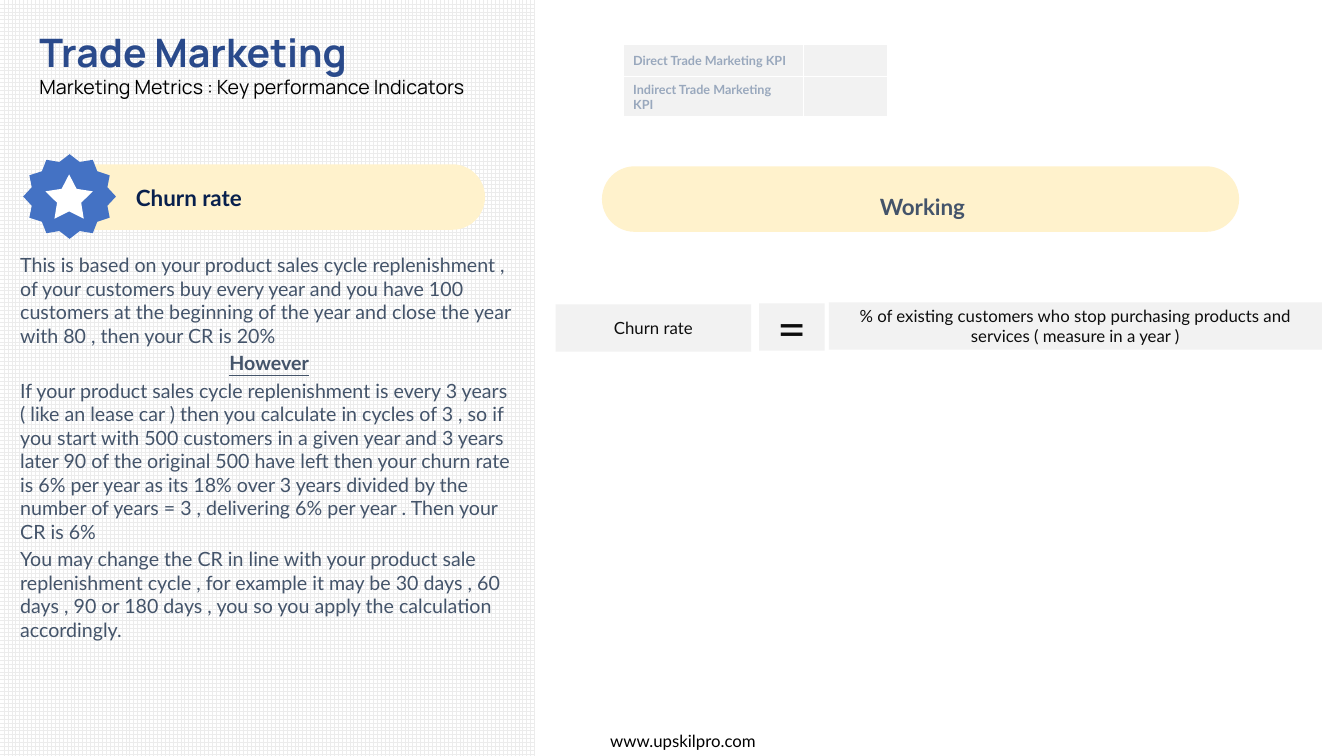
from dataclasses import dataclass

from lxml.etree import SubElement
from pptx import Presentation
from pptx.dml.color import RGBColor
from pptx.enum.dml import MSO_PATTERN
from pptx.enum.shapes import MSO_SHAPE
from pptx.enum.text import MSO_ANCHOR, MSO_AUTO_SIZE, PP_ALIGN
from pptx.oxml.ns import qn
from pptx.shapes.autoshape import Shape
from pptx.slide import Slide
from pptx.text.text import TextFrame
from pptx.util import Inches, Pt

SLIDE_WIDTH, SLIDE_HEIGHT = Inches(13.33), Inches(7.5)


@dataclass(frozen=True)
class Theme:
    body_font: str = "Lato"
    title_font: str = "Manrope"
    grid: str = "ECECEC"
    white: str = "FFFFFF"
    black: str = "000000"
    tile: str = "F2F2F2"
    tile_text: str = "0D0D0D"
    cream: str = "FFF2CC"
    badge: str = "4472C4"
    title: str = "2A4A8B"
    navy: str = "08204D"
    slate: str = "44546A"
    muted: str = "99A8BD"
    title_size: float = 28
    sign_size: float = 36
    heading_size: float = 16
    body_size: float = 14
    small_size: float = 12
    table_size: float = 9


THEME = Theme()


@dataclass(frozen=True)
class Area:
    """Left, top, width and height in percent of the slide."""
    left: float
    top: float
    width: float
    height: float

    def emu(self) -> tuple[int, int, int, int]:
        return (int(SLIDE_WIDTH * self.left / 100), int(SLIDE_HEIGHT * self.top / 100),
                int(SLIDE_WIDTH * self.width / 100), int(SLIDE_HEIGHT * self.height / 100))


@dataclass(frozen=True)
class Style:
    size: float
    color: str
    bold: bool = False
    align: PP_ALIGN = PP_ALIGN.LEFT
    underline: bool = False
    font: str = THEME.body_font


@dataclass(frozen=True)
class Heading:
    text: str
    pill: Area
    label: Area
    style: Style


@dataclass(frozen=True)
class Tile:
    text: str
    area: Area
    size: float


BODY = Style(THEME.body_size, THEME.slate)
HOWEVER = Style(THEME.body_size, THEME.slate, True, PP_ALIGN.CENTER, True)
TITLE_LINES = [
    ("Trade Marketing", Style(THEME.title_size, THEME.title, True, font=THEME.title_font)),
    ("Marketing Metrics : Key performance Indicators",
     Style(THEME.body_size, THEME.black, font=THEME.title_font)),
]
EXPLANATION = [
    ("This is based on your product sales cycle replenishment , of your customers buy every "
     "year and you have 100 customers at the beginning of the year and close the year with "
     "80 , then your CR is 20%", BODY),
    ("However", HOWEVER),
    ("If your product sales cycle replenishment is every 3 years ( like an lease car ) then "
     "you calculate in cycles of 3 , so if you start with 500 customers in a given year and "
     "3 years later 90 of the original 500 have left then your churn rate is 6% per year as "
     "its 18% over 3 years divided by the number of years = 3 , delivering 6% per year . "
     "Then your CR is 6%", BODY),
    ("You may change the CR in line with your product sale replenishment cycle , for example "
     "it may be 30 days , 60 days , 90 or 180 days , you so you apply the calculation "
     "accordingly.", BODY),
]
HEADINGS = [
    Heading("Working", Area(44.79, 22, 47.41, 8.67), Area(46.81, 24.8, 43.66, 4.93),
            Style(THEME.heading_size, THEME.slate, True, PP_ALIGN.CENTER)),
    Heading("Churn rate", Area(2.93, 21.73, 33.16, 8.67), Area(9.38, 23.73, 9.68, 4.93),
            Style(THEME.heading_size, THEME.navy, True)),
]
FORMULA = [
    Tile("Churn rate", Area(41.34, 40.27, 14.55, 6.27), THEME.small_size),
    Tile("=", Area(56.49, 40.13, 4.88, 6.27), THEME.sign_size),
    Tile("% of existing customers who stop purchasing products and services "
         "( measure in a year )", Area(61.67, 40, 36.68, 6.27), THEME.small_size),
]
KPI_KINDS = ["Direct Trade Marketing KPI", "Indirect Trade Marketing KPI"]
KPI_COLUMNS = [1.79, 0.83]


def write(frame: TextFrame, lines: list[tuple[str, Style]], gap: float = 0,
          anchor: MSO_ANCHOR = MSO_ANCHOR.TOP) -> None:
    """Fill a frame with unbulleted paragraphs, gap points apart."""
    frame.word_wrap = True
    frame.auto_size = MSO_AUTO_SIZE.NONE
    frame.vertical_anchor = anchor
    for index, (text, style) in enumerate(lines):
        paragraph = frame.add_paragraph() if index else frame.paragraphs[0]
        paragraph.text = text
        paragraph.alignment = style.align
        paragraph.space_before = Pt(gap if index else 0)
        properties = paragraph._p.get_or_add_pPr()
        properties.set("marL", "0")
        properties.set("indent", "0")
        SubElement(properties, qn("a:buNone"))
        font = paragraph.font
        font.name, font.size = style.font, Pt(style.size)
        font.bold, font.underline = style.bold, style.underline
        font.color.rgb = RGBColor.from_string(style.color)


def add_block(slide: Slide, kind: MSO_SHAPE, area: Area, color: str,
              adjustment: float | None = None) -> Shape:
    block = slide.shapes.add_shape(kind, *area.emu())
    block.shadow.inherit = False
    block.line.fill.background()
    block.fill.solid()
    block.fill.fore_color.rgb = RGBColor.from_string(color)
    if adjustment is not None:
        block.adjustments[0] = adjustment
    return block


def add_panel(slide: Slide) -> None:
    """Put the gridded left panel behind the placeholders."""
    panel = add_block(slide, MSO_SHAPE.RECTANGLE, Area(0, 0, 39.84, 100), THEME.white)
    panel.fill.patterned()
    panel.fill.pattern = MSO_PATTERN.LARGE_GRID
    panel.fill.fore_color.rgb = RGBColor.from_string(THEME.grid)
    panel.fill.back_color.rgb = RGBColor.from_string(THEME.white)
    slide.shapes._spTree.insert(2, panel._element)


def fill_placeholder(placeholder: Shape, area: Area, lines: list[tuple[str, Style]],
                     gap: float = 0) -> None:
    placeholder.left, placeholder.top, placeholder.width, placeholder.height = area.emu()
    write(placeholder.text_frame, lines, gap)


def add_label(slide: Slide, area: Area, text: str, style: Style) -> None:
    label = slide.shapes.add_textbox(*area.emu())
    write(label.text_frame, [(text, style)], anchor=MSO_ANCHOR.MIDDLE)


def add_kpi_table(slide: Slide, area: Area) -> None:
    table = slide.shapes.add_table(len(KPI_KINDS), len(KPI_COLUMNS), *area.emu()).table
    for column, width in zip(table.columns, KPI_COLUMNS):
        column.width = Inches(width)
    for row, kind in enumerate(KPI_KINDS):
        for column, text in enumerate((kind, "")):
            cell = table.cell(row, column)
            cell.fill.solid()
            cell.fill.fore_color.rgb = RGBColor.from_string(THEME.tile)
            cell.vertical_anchor = MSO_ANCHOR.MIDDLE
            paragraph = cell.text_frame.paragraphs[0]
            paragraph.text = text
            font = paragraph.font
            font.name, font.size, font.bold = THEME.body_font, Pt(THEME.table_size), True
            font.color.rgb = RGBColor.from_string(THEME.muted)


def main() -> None:
    deck = Presentation()
    deck.slide_width, deck.slide_height = SLIDE_WIDTH, SLIDE_HEIGHT
    slide = deck.slides.add_slide(deck.slide_layouts[1])
    add_panel(slide)
    fill_placeholder(slide.shapes.title, Area(2.18, 3.07, 65.27, 10.93), TITLE_LINES)
    fill_placeholder(slide.placeholders[1], Area(0.75, 32.8, 38.56, 53.6), EXPLANATION, 2.8)
    for heading in HEADINGS:
        add_block(slide, MSO_SHAPE.ROUNDED_RECTANGLE, heading.pill, THEME.cream, 0.5)
        add_label(slide, heading.label, heading.text, heading.style)
    add_block(slide, MSO_SHAPE.STAR_12_POINT, Area(1.73, 20.4, 6.9, 11.2), THEME.badge, 0.422)
    add_block(slide, MSO_SHAPE.STAR_5_POINT, Area(3.38, 23.07, 3.53, 5.87), THEME.white, 0.254)
    for tile in FORMULA:
        block = add_block(slide, MSO_SHAPE.RECTANGLE, tile.area, THEME.tile)
        style = Style(tile.size, THEME.tile_text, align=PP_ALIGN.CENTER)
        write(block.text_frame, [(tile.text, style)], anchor=MSO_ANCHOR.MIDDLE)
    add_label(slide, Area(40.51, 96, 20.63, 4), "www.upskilpro.com",
              Style(THEME.small_size, THEME.black, align=PP_ALIGN.CENTER))
    add_kpi_table(slide, Area(46.36, 5.87, 19.65, 8.53))
    deck.save("out.pptx")


if __name__ == "__main__":
    main()
